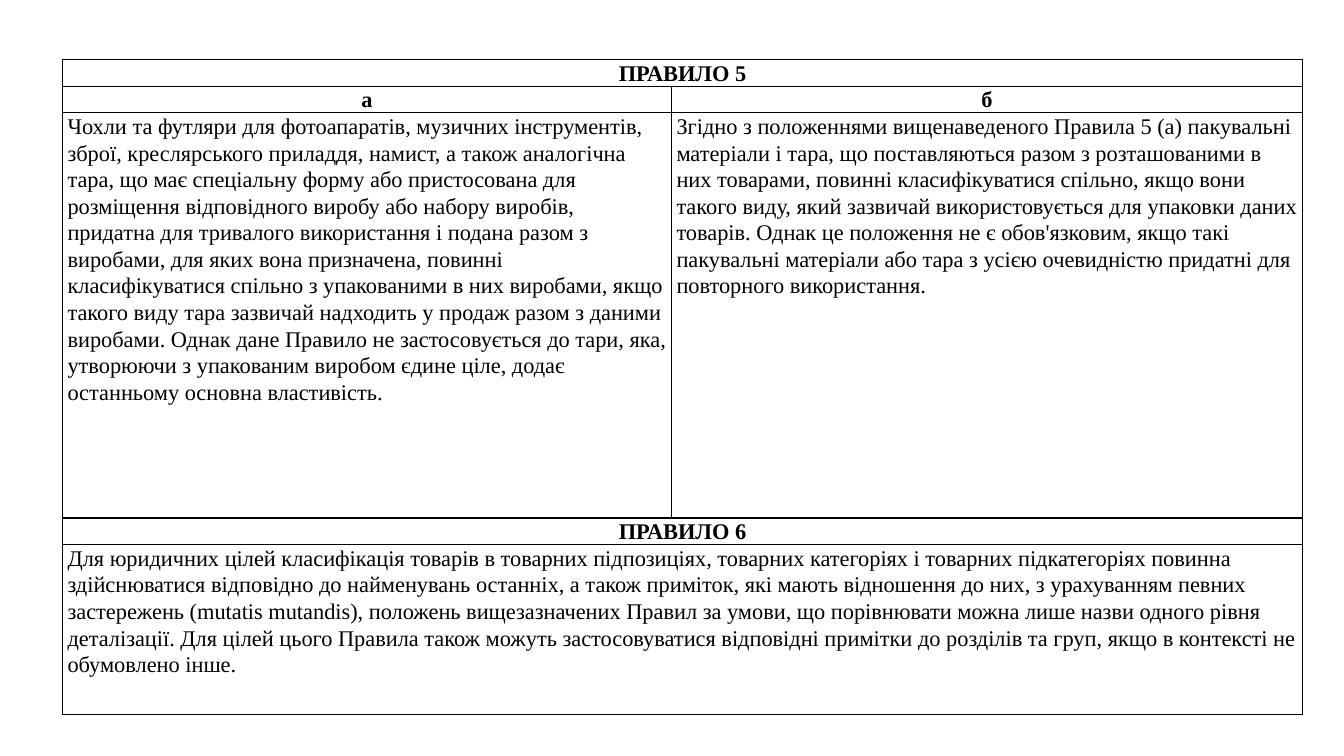
"""Builds the slide with the table of classification rules 5 and 6."""
from lxml import etree
from pptx import Presentation
from pptx.dml.color import RGBColor
from pptx.enum.text import PP_ALIGN
from pptx.oxml.ns import qn
from pptx.util import Inches, Pt

CENTER, LEFT = PP_ALIGN.CENTER, PP_ALIGN.LEFT
COLORS = {"ink": "000000", "paper": "FFFFFF"}
FONT = "Times New Roman"
COLUMN_WIDTHS = [6.04, 6.26]
ROW_HEIGHTS = [0.21, 0.21, 4.02, 0.21, 1.69]

RULE_5A = (
    "Чохли та футляри для фотоапаратів, музичних інструментів, зброї, "
    "креслярського приладдя, намист, а також аналогічна тара, що має спеціальну "
    "форму або пристосована для розміщення відповідного виробу або набору виробів, "
    "придатна для тривалого використання і подана разом з виробами, для яких вона "
    "призначена, повинні класифікуватися спільно з упакованими в них виробами, якщо "
    "такого виду тара зазвичай надходить у продаж разом з даними виробами. Однак "
    "дане Правило не застосовується до тари, яка, утворюючи з упакованим виробом "
    "єдине ціле, додає останньому основна властивість."
)
RULE_5B = (
    "Згідно з положеннями вищенаведеного Правила 5 (а) пакувальні матеріали і тара, "
    "що поставляються разом з розташованими в них товарами, повинні класифікуватися "
    "спільно, якщо вони такого виду, який зазвичай використовується для упаковки "
    "даних товарів. Однак це положення не є обов'язковим, якщо такі пакувальні "
    "матеріали або тара з усією очевидністю придатні для повторного використання."
)
RULE_6 = (
    "Для юридичних цілей класифікація товарів в товарних підпозиціях, товарних "
    "категоріях і товарних підкатегоріях повинна здійснюватися відповідно до "
    "найменувань останніх, а також приміток, які мають відношення до них, з "
    "урахуванням певних застережень (mutatis mutandis), положень вищезазначених "
    "Правил за умови, що порівнювати можна лише назви одного рівня деталізації. Для "
    "цілей цього Правила також можуть застосовуватися відповідні примітки до "
    "розділів та груп, якщо в контексті не обумовлено інше."
)
RULE_ROWS = [["ПРАВИЛО 5"], ["а", "б"], [RULE_5A, RULE_5B], ["ПРАВИЛО 6"], [RULE_6]]
HEADING_ROWS = {0, 1, 3}


def style_cell(cell):
    """Gives a cell its margins, fill and thin border."""
    cell.margin_left = cell.margin_right = Inches(0.05)
    cell.margin_top = cell.margin_bottom = 0
    properties = cell._tc.get_or_add_tcPr()
    for side in ("a:lnL", "a:lnR", "a:lnT", "a:lnB"):
        border = etree.SubElement(properties, qn(side), w=str(Pt(1)))
        border_fill = etree.SubElement(border, qn("a:solidFill"))
        etree.SubElement(border_fill, qn("a:srgbClr"), val=COLORS["ink"])
    cell.fill.solid()
    cell.fill.fore_color.rgb = RGBColor.from_string(COLORS["paper"])


presentation = Presentation()
presentation.slide_width = Inches(13.33)
presentation.slide_height = Inches(7.5)
slide = presentation.slides.add_slide(presentation.slide_layouts[6])

rules_frame = slide.shapes.add_table(
    len(ROW_HEIGHTS), len(COLUMN_WIDTHS),
    Inches(0.62), Inches(0.59), Inches(12.3), Inches(6.57),
)
rules = rules_frame.table
rules.first_row = rules.horz_banding = False
for column, width in zip(rules.columns, COLUMN_WIDTHS):
    column.width = Inches(width)
for row, height in zip(rules.rows, ROW_HEIGHTS):
    row.height = Inches(height)
rules_frame.height = Inches(6.57)

for cell in rules.iter_cells():
    style_cell(cell)

for row_index, texts in enumerate(RULE_ROWS):
    is_heading = row_index in HEADING_ROWS
    if len(texts) == 1:
        rules.cell(row_index, 0).merge(rules.cell(row_index, 1))
    for column_index, text in enumerate(texts):
        paragraph = rules.cell(row_index, column_index).text_frame.paragraphs[0]
        paragraph.alignment = CENTER if is_heading else LEFT
        paragraph.line_spacing = 1.07
        run = paragraph.add_run()
        run.text = text
        run.font.name = FONT
        run.font.size = Pt(16)
        run.font.bold = is_heading
        run.font.color.rgb = RGBColor.from_string(COLORS["ink"])

presentation.save("out.pptx")
